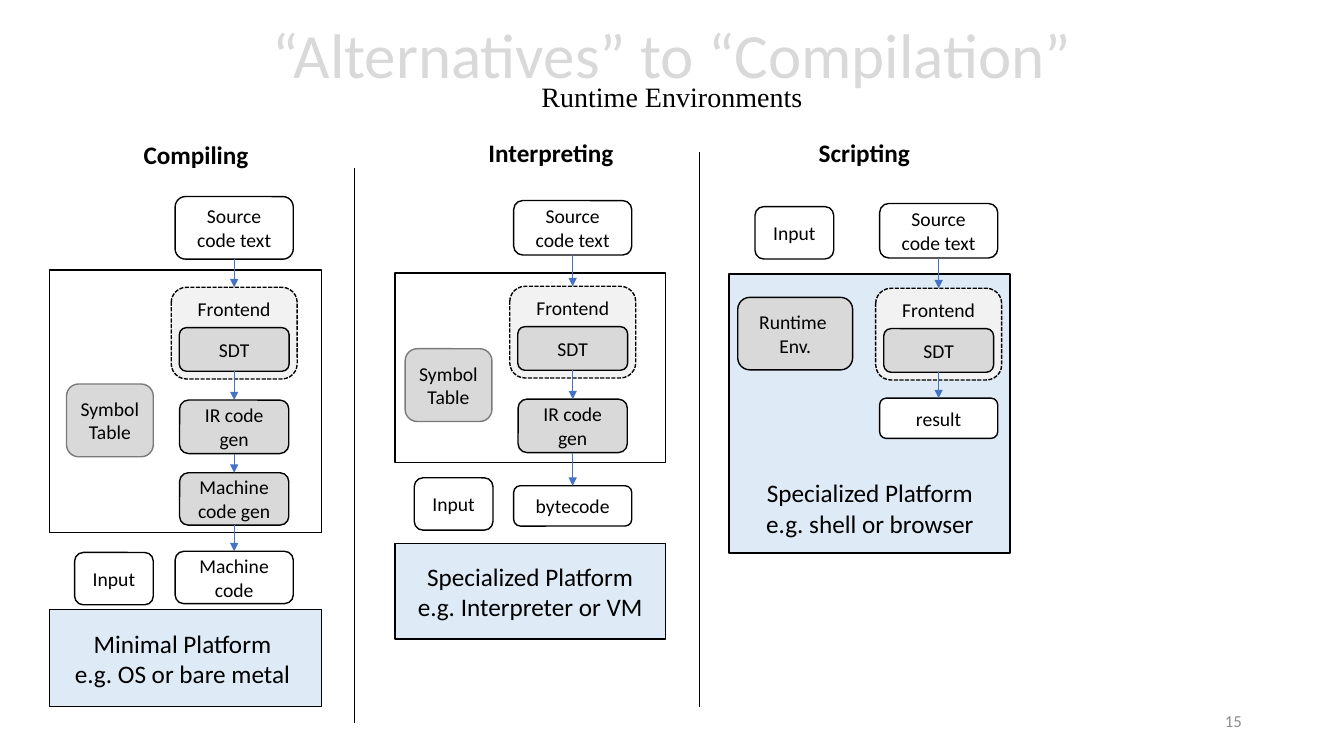
from dataclasses import dataclass
from itertools import pairwise
from lxml.etree import SubElement
from pptx import Presentation
from pptx.dml.color import RGBColor as Rgb
from pptx.enum.dml import MSO_LINE as Dash
from pptx.enum.shapes import MSO_CONNECTOR as Link, MSO_SHAPE as Form
from pptx.enum.text import MSO_ANCHOR as Anchor, PP_ALIGN as Align
from pptx.oxml.ns import qn
from pptx.shapes.base import BaseShape
from pptx.slide import Slide
from pptx.text.text import TextFrame
from pptx.util import Pt


@dataclass(frozen=True)
class Theme:
    ink: str = "000000"
    paper: str = "FFFFFF"
    stage: str = "D9D9D9"
    frontend: str = "F2F2F2"
    platform: str = "DEEBF7"
    arrow: str = "4472C4"
    table_edge: str = "7A7A7A"
    title: str = "D9D9D9"
    number: str = "8C8C8C"
    font: str = "Calibri"
    subtitle_font: str = "Times New Roman"
    title_size: float = 45
    subtitle_size: float = 20
    label_size: float = 18
    box_size: float = 14
    number_size: float = 12
    outline: float = 1
    hairline: float = 0.5


THEME = Theme()


@dataclass(frozen=True)
class Area:
    left: float
    top: float
    width: float
    height: float


@dataclass(frozen=True)
class Step:
    label: str
    top: float
    height: float
    width: float = 84.4
    fill: str = THEME.paper


@dataclass(frozen=True)
class Side:
    lines: tuple[str, ...]
    area: Area
    fill: str = THEME.paper
    edge: str = THEME.ink


@dataclass(frozen=True)
class Column:
    heading: str
    heading_area: Area
    axis: float
    frames: tuple[tuple[Area, str], ...]
    source: Step
    frontend_top: float
    later_steps: tuple[Step, ...]
    sides: tuple[Side, ...]
    platform: tuple[str, str]
    platform_area: Area


def generator(label: str, top: float, height: float) -> Step:
    return Step(label, top, height, 78, THEME.stage)


def input_box(left: float, top: float) -> Side:
    return Side(("Input",), Area(left, top, 56.2, 37.4))


def symbol_table(left: float, top: float) -> Side:
    return Side(("Symbol", "Table"), Area(left, top, 62, 52), THEME.stage, THEME.table_edge)


COLUMNS = (
    Column("Compiling", Area(95, 95.8, 90, 28.8), 167.3,
           ((Area(35.3, 193, 194.4, 187.2), THEME.paper),
            (Area(35.3, 435.6, 194.4, 69.1), THEME.platform)),
           Step("Source code text", 140.4, 44.7), 205.2,
           (generator("IR code gen", 285.8, 38.2), generator("Machine code gen", 337.7, 37.4),
            Step("Machine code", 393.8, 37.4)),
           (symbol_table(47.5, 274.3), input_box(53.3, 394.6)),
           ("Minimal Platform", "e.g. OS or bare metal"), Area(45.4, 445, 169.9, 51.1)),
    Column("Interpreting", Area(341.3, 94.3, 104.4, 28.8), 409.1,
           ((Area(282.2, 195.1, 193, 135.4), THEME.paper),
            (Area(282.2, 388.1, 193, 68.4), THEME.platform)),
           Step("Source code text", 143.3, 38.9), 204.5,
           (generator("IR code gen", 285.1, 38.2), Step("bytecode", 347, 28.8)),
           (symbol_table(289.4, 249.1), input_box(295.9, 341.3)),
           ("Specialized Platform", "e.g. Interpreter or VM"), Area(282.2, 397.4, 193, 51.1)),
    Column("Scripting", Area(577.4, 94.3, 80, 28.8), 670.5,
           ((Area(520.6, 195.8, 200.9, 199.4), THEME.platform),),
           Step("Source code text", 145.4, 38.9), 205.9,
           (Step("result", 284.4, 28.8),),
           (Side(("Runtime ", "Env."), Area(527, 212.4, 82.1, 51.8), THEME.stage),
            input_box(539.3, 147.6)),
           ("Specialized Platform", "e.g. shell or browser"), Area(539.3, 337.7, 164.2, 51.1)),
)
DIVIDERS = ((253.4, 120.2), (499.7, 108.7))
DIVIDER_LENGTH = 396


def add_run(paragraph, text: str, size: float, color: str = THEME.ink,
            font: str = THEME.font, bold: bool = False) -> None:
    run = paragraph.add_run()
    run.text = text
    run.font.name = font
    run.font.size = Pt(size)
    run.font.bold = bold
    run.font.color.rgb = Rgb.from_string(color)


def write(frame: TextFrame, lines: tuple[str, ...], size: float, color: str = THEME.ink,
          bold: bool = False, align: Align = Align.CENTER) -> None:
    for index, line in enumerate(lines):
        paragraph = frame.add_paragraph() if index else frame.paragraphs[0]
        paragraph.alignment = align
        add_run(paragraph, line, size, color, bold=bold)


def place(shape: BaseShape, area: Area) -> None:
    shape.left, shape.top = Pt(area.left), Pt(area.top)
    shape.width, shape.height = Pt(area.width), Pt(area.height)


def draw_box(slide: Slide, area: Area, fill: str, lines: tuple[str, ...] = (),
             form: Form = Form.ROUNDED_RECTANGLE, edge: str = THEME.ink,
             anchor: Anchor = Anchor.MIDDLE) -> BaseShape:
    box = slide.shapes.add_shape(form, 0, 0, 0, 0)
    place(box, area)
    box.shadow.inherit = False
    box.fill.solid()
    box.fill.fore_color.rgb = Rgb.from_string(fill)
    box.line.color.rgb = Rgb.from_string(edge)
    box.line.width = Pt(THEME.outline)
    box.text_frame.word_wrap = True
    box.text_frame.vertical_anchor = anchor
    write(box.text_frame, lines, THEME.box_size)
    return box


def draw_label(slide: Slide, area: Area, lines: tuple[str, ...], size: float,
               color: str = THEME.ink, bold: bool = False, align: Align = Align.CENTER,
               anchor: Anchor = Anchor.TOP) -> None:
    label = slide.shapes.add_textbox(0, 0, 0, 0)
    place(label, area)
    label.text_frame.word_wrap = align == Align.RIGHT
    label.text_frame.vertical_anchor = anchor
    write(label.text_frame, lines, size, color, bold, align)


def draw_vertical(slide: Slide, x: float, top: float, bottom: float,
                  color: str, arrow: bool = False) -> None:
    line = slide.shapes.add_connector(Link.STRAIGHT, Pt(x), Pt(top), Pt(x), Pt(bottom))
    line.line.color.rgb = Rgb.from_string(color)
    line.line.width = Pt(THEME.hairline)
    if arrow:
        SubElement(line.line._get_or_add_ln(), qn("a:tailEnd"), type="triangle")
    SubElement(line._element.spPr, qn("a:effectLst"))


def draw_column(slide: Slide, column: Column) -> None:
    for area, fill in column.frames:
        draw_box(slide, area, fill, form=Form.RECTANGLE)
    frontend = Area(column.axis - 45, column.frontend_top, 90, 65.5)
    draw_box(slide, frontend, THEME.frontend, ("Frontend",),
             anchor=Anchor.TOP).line.dash_style = Dash.SQUARE_DOT
    sdt = Step("SDT", column.frontend_top + 28.8, 31.2, 78.5, THEME.stage)
    for step in (column.source, sdt, *column.later_steps):
        area = Area(column.axis - step.width / 2, step.top, step.width, step.height)
        draw_box(slide, area, step.fill, (step.label,))
    source_bottom = column.source.top + column.source.height
    draw_vertical(slide, column.axis, source_bottom, column.frontend_top, THEME.arrow, True)
    for step, following in pairwise((sdt, *column.later_steps)):
        draw_vertical(slide, column.axis, step.top + step.height, following.top,
                      THEME.arrow, True)
    for side in column.sides:
        draw_box(slide, side.area, side.fill, side.lines, edge=side.edge)
    draw_label(slide, column.heading_area, (column.heading,), THEME.label_size, bold=True)
    draw_label(slide, column.platform_area, column.platform, THEME.label_size)


def draw_title(slide: Slide) -> None:
    title = slide.shapes.title
    place(title, Area(0, 0.7, 960, 104.4))
    title.text_frame.vertical_anchor = Anchor.MIDDLE
    paragraph = title.text_frame.paragraphs[0]
    paragraph.alignment = Align.CENTER
    paragraph.line_spacing = 0.7
    add_run(paragraph, "“Alternatives” to “Compilation”", THEME.title_size, THEME.title)
    paragraph.add_line_break()
    add_run(paragraph, "Runtime Environments", THEME.subtitle_size, font=THEME.subtitle_font)


def main() -> None:
    deck = Presentation()
    deck.slide_width, deck.slide_height = Pt(960), Pt(540)
    slide = deck.slides.add_slide(deck.slide_layouts[5])
    draw_title(slide)
    for column in COLUMNS:
        draw_column(slide, column)
    for x, top in DIVIDERS:
        draw_vertical(slide, x, top, top + DIVIDER_LENGTH, THEME.ink)
    draw_label(slide, Area(678.2, 500.4, 216, 28.8), ("15",), THEME.number_size, THEME.number,
               align=Align.RIGHT, anchor=Anchor.MIDDLE)
    deck.save("out.pptx")


if __name__ == "__main__":
    main()
